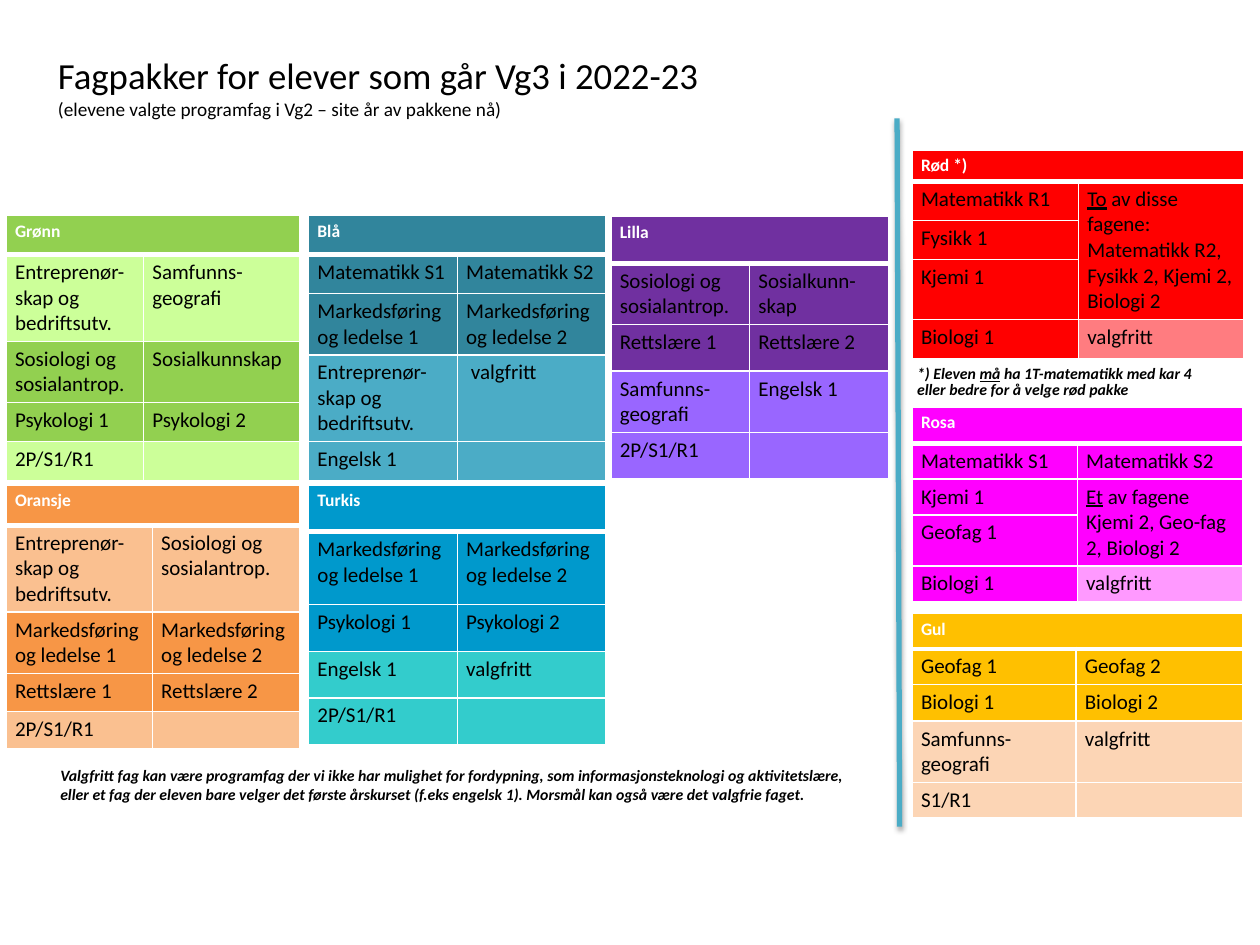
from typing import NamedTuple

from lxml import etree
from pptx import Presentation
from pptx import util as u
from pptx.dml.color import RGBColor
from pptx.enum import shapes, text
from pptx.oxml import parse_xml
from pptx.oxml.ns import nsdecls, qn

FONT = "Calibri"
BLACK = RGBColor(0x00, 0x00, 0x00)
WHITE = RGBColor(0xFF, 0xFF, 0xFF)
GREEN, PALE_GREEN = RGBColor(0x92, 0xD0, 0x50), RGBColor(0xCC, 0xFF, 0x99)
BLUE, PALE_BLUE = RGBColor(0x31, 0x85, 0x9C), RGBColor(0x4B, 0xAC, 0xC6)
PURPLE, PALE_PURPLE = RGBColor(0x70, 0x30, 0xA0), RGBColor(0x99, 0x66, 0xFF)
ORANGE, PALE_ORANGE = RGBColor(0xF7, 0x96, 0x46), RGBColor(0xFA, 0xC0, 0x90)
TURQUOISE, PALE_TURQUOISE = RGBColor(0x00, 0x99, 0xCC), RGBColor(0x33, 0xCC, 0xCC)
RED, PALE_RED = RGBColor(0xFF, 0x00, 0x00), RGBColor(0xFF, 0x7C, 0x80)
PINK, PALE_PINK = RGBColor(0xFF, 0x00, 0xFF), RGBColor(0xFF, 0x99, 0xFF)
YELLOW, PALE_YELLOW = RGBColor(0xFF, 0xC0, 0x00), RGBColor(0xFC, 0xD5, 0xB5)


class Row(NamedTuple):
    height: float
    first: str
    second: str = ""
    first_pale: bool = False
    second_pale: bool = False
    second_span: int = 1


def pale(height: float, first: str, second: str = "") -> Row:
    return Row(height, first, second, True, True)


class Package(NamedTuple):
    name: str
    colour: RGBColor
    pale_colour: RGBColor
    left: float
    top: float
    columns: tuple[float, float]
    header_height: float
    rows: list[Row]


ENTREPRENEURSHIP = "Entreprenør-skap og bedriftsutv."
SOCIOLOGY = "Sosiologi og sosialantrop."
GEOGRAPHY = "Samfunns-geografi"
MARKETING = ("Markedsføring og ledelse 1", "Markedsføring og ledelse 2")

# Underscores in a text enclose an underlined word.
PACKAGES = [
    Package("Grønn", GREEN, PALE_GREEN, 0.05, 1.71, (1.09, 1.24), 0.31, [
        pale(0.68, ENTREPRENEURSHIP, GEOGRAPHY),
        Row(0.48, SOCIOLOGY, "Sosialkunnskap"),
        Row(0.31, "Psykologi 1", "Psykologi 2"),
        pale(0.31, "2P/S1/R1"),
    ]),
    Package("Turkis", TURQUOISE, PALE_TURQUOISE, 2.45, 3.85, (1.18, 1.18), 0.37, [
        Row(0.58, *MARKETING),
        Row(0.37, "Psykologi 1", "Psykologi 2"),
        pale(0.37, "Engelsk 1", "valgfritt"),
        pale(0.37, "2P/S1/R1"),
    ]),
    Package("Blå", BLUE, PALE_BLUE, 2.45, 1.71, (1.18, 1.18), 0.31, [
        Row(0.31, "Matematikk S1", "Matematikk S2"),
        Row(0.48, *MARKETING),
        pale(0.68, ENTREPRENEURSHIP, " valgfritt"),
        pale(0.31, "Engelsk 1"),
    ]),
    Package("Gul", YELLOW, PALE_YELLOW, 7.24, 4.87, (1.3, 1.32), 0.28, [
        Row(0.28, "Geofag 1", "Geofag 2"),
        Row(0.29, "Biologi 1", "Biologi 2"),
        pale(0.47, GEOGRAPHY, "valgfritt"),
        pale(0.28, "S1/R1"),
    ]),
    Package("Oransje", ORANGE, PALE_ORANGE, 0.05, 3.85, (1.16, 1.17), 0.32, [
        pale(0.68, ENTREPRENEURSHIP, SOCIOLOGY),
        Row(0.47, *MARKETING),
        Row(0.3, "Rettslære 1", "Rettslære 2"),
        pale(0.3, "2P/S1/R1"),
    ]),
    Package("Rosa", PINK, PALE_PINK, 7.24, 3.23, (1.31, 1.31), 0.29, [
        Row(0.28, "Matematikk S1", "Matematikk S2"),
        Row(0.28, "Kjemi 1", "_Et_ av fagene Kjemi 2, Geo-fag 2, Biologi 2",
            second_span=2),
        Row(0.4, "Geofag 1"),
        Row(0.28, "Biologi 1", "valgfritt", second_pale=True),
    ]),
    Package("Rød *)", RED, PALE_RED, 7.24, 1.19, (1.32, 1.31), 0.24, [
        Row(0.31, "Matematikk R1",
            "_To_ av disse fagene: Matematikk R2,\nFysikk 2, Kjemi 2, Biologi 2",
            second_span=3),
        Row(0.31, "Fysikk 1"),
        Row(0.46, "Kjemi 1"),
        Row(0.31, "Biologi 1", "valgfritt", second_pale=True),
    ]),
    Package("Lilla", PURPLE, PALE_PURPLE, 4.85, 1.72, (1.1, 1.1), 0.37, [
        Row(0.48, SOCIOLOGY, "Sosialkunn-skap"),
        Row(0.37, "Rettslære 1", "Rettslære 2"),
        pale(0.48, GEOGRAPHY, "Engelsk 1"),
        pale(0.37, "2P/S1/R1"),
    ]),
]


def write(frame, content: str, size: float, colour: RGBColor = BLACK,
          bold: bool = False, italic: bool = False) -> None:
    """Fill a text frame, underlining the words enclosed in underscores."""
    for index, line in enumerate(content.split("\n")):
        paragraph = frame.add_paragraph() if index else frame.paragraphs[0]
        font = paragraph.font
        font.name, font.size, font.bold, font.italic = FONT, u.Pt(size), bold, italic
        font.color.rgb = colour
        for part, words in enumerate(line.split("_")):
            if words:
                run = paragraph.add_run()
                run.text = words
                if part % 2:
                    run.font.underline = True
        if not line:
            end = etree.SubElement(paragraph._p, qn("a:endParaRPr"))
            end.set("sz", str(int(size * 100)))


def set_borders(cell, top: int = 1, bottom: int = 1) -> None:
    properties = cell._tc.get_or_add_tcPr()
    widths = {"lnL": 1, "lnR": 1, "lnT": top, "lnB": bottom}
    for index, (side, width) in enumerate(widths.items()):
        properties.insert(index, parse_xml(
            f'<a:{side} {nsdecls("a")} w="{u.Pt(width)}"><a:solidFill>'
            f'<a:srgbClr val="{WHITE}"/></a:solidFill></a:{side}>'))


def style_cell(cell, fill: RGBColor) -> None:
    cell.fill.solid()
    cell.fill.fore_color.rgb = fill
    cell.margin_left = cell.margin_right = u.Inches(0.07)
    cell.margin_top = cell.margin_bottom = u.Inches(0.04)


def draw_package(slide, package: Package) -> None:
    heights = [package.header_height] + [row.height for row in package.rows]
    table = slide.shapes.add_table(
        len(heights), 2, u.Inches(package.left), u.Inches(package.top),
        u.Inches(sum(package.columns)), u.Inches(sum(heights))).table
    for column, width in zip(table.columns, package.columns):
        column.width = u.Inches(width)
    for table_row, height in zip(table.rows, heights):
        table_row.height = u.Inches(height)

    for column in range(2):
        header = table.cell(0, column)
        style_cell(header, package.colour)
        set_borders(header, bottom=3)
    table.cell(0, 0).merge(table.cell(0, 1))
    write(table.cell(0, 0).text_frame, package.name, 10, WHITE, bold=True)

    for index, row in enumerate(package.rows, 1):
        subjects = [(row.first, row.first_pale), (row.second, row.second_pale)]
        for column, (subject, is_pale) in enumerate(subjects):
            cell = table.cell(index, column)
            style_cell(cell, package.pale_colour if is_pale else package.colour)
            set_borders(cell, top=3 if index == 1 else 1)
            write(cell.text_frame, subject, 12)
        if row.second_span > 1:
            table.cell(index, 1).merge(table.cell(index + row.second_span - 1, 1))


def draw_title(slide) -> None:
    title = slide.shapes.title
    title.left, title.top = u.Inches(0.36), u.Inches(0.14)
    title.width, title.height = u.Inches(8.62), u.Inches(1.09)
    title.text_frame.auto_size = text.MSO_AUTO_SIZE.NONE
    title.text_frame.vertical_anchor = text.MSO_ANCHOR.MIDDLE
    paragraph = title.text_frame.paragraphs[0]
    paragraph.alignment = text.PP_ALIGN.LEFT
    paragraph.font.name = FONT
    paragraph.font.color.rgb = BLACK
    heading = paragraph.add_run()
    heading.text = "Fagpakker for elever som går Vg3 i 2022-23"
    heading.font.size = u.Pt(21)
    paragraph.add_line_break()
    subtitle = paragraph.add_run()
    subtitle.text = "(elevene valgte programfag i Vg2 – site år av pakkene nå)"
    subtitle.font.size = u.Pt(11)


def draw_note(slide, left: float, top: float, width: float, height: float,
              content: str, line_spacing: float = 1.0) -> None:
    frame = slide.shapes.add_textbox(
        u.Inches(left), u.Inches(top), u.Inches(width), u.Inches(height)).text_frame
    frame.word_wrap = True
    write(frame, content, 9, bold=True, italic=True)
    for paragraph in frame.paragraphs:
        paragraph.line_spacing = line_spacing


def draw_divider(slide) -> None:
    divider = slide.shapes.add_connector(
        shapes.MSO_CONNECTOR.STRAIGHT,
        u.Inches(7.12), u.Inches(0.94), u.Inches(7.14), u.Inches(6.56))
    divider.line.color.rgb = PALE_BLUE
    divider.line.width = u.Pt(3)
    divider._element.spPr.append(parse_xml(
        f'<a:effectLst {nsdecls("a")}><a:outerShdw blurRad="{u.Pt(3.1)}" '
        f'dist="{u.Pt(1.8)}" dir="5400000" rotWithShape="0"><a:srgbClr val="{BLACK}">'
        '<a:alpha val="35000"/></a:srgbClr></a:outerShdw></a:effectLst>'))


def main() -> None:
    deck = Presentation()
    deck.slide_width, deck.slide_height = u.Inches(10), u.Inches(7.5)
    slide = deck.slides.add_slide(deck.slide_layouts.get_by_name("Title Only"))
    draw_title(slide)
    for package in PACKAGES:
        draw_package(slide, package)
    draw_note(slide, 0.38, 6.03, 9.69, 0.4,
              "Valgfritt fag kan være programfag der vi ikke har mulighet for "
              "fordypning, som informasjonsteknologi og aktivitetslære,\n"
              "eller et fag der eleven bare velger det første årskurset "
              "(f.eks engelsk 1). Morsmål kan også være det valgfrie faget.")
    draw_note(slide, 7.18, 2.87, 2.61, 0.35,
              "*) Eleven _må_ ha 1T-matematikk med kar 4 eller bedre for å velge "
              "rød pakke", line_spacing=0.8)
    draw_divider(slide)
    deck.save("out.pptx")


if __name__ == "__main__":
    main()
